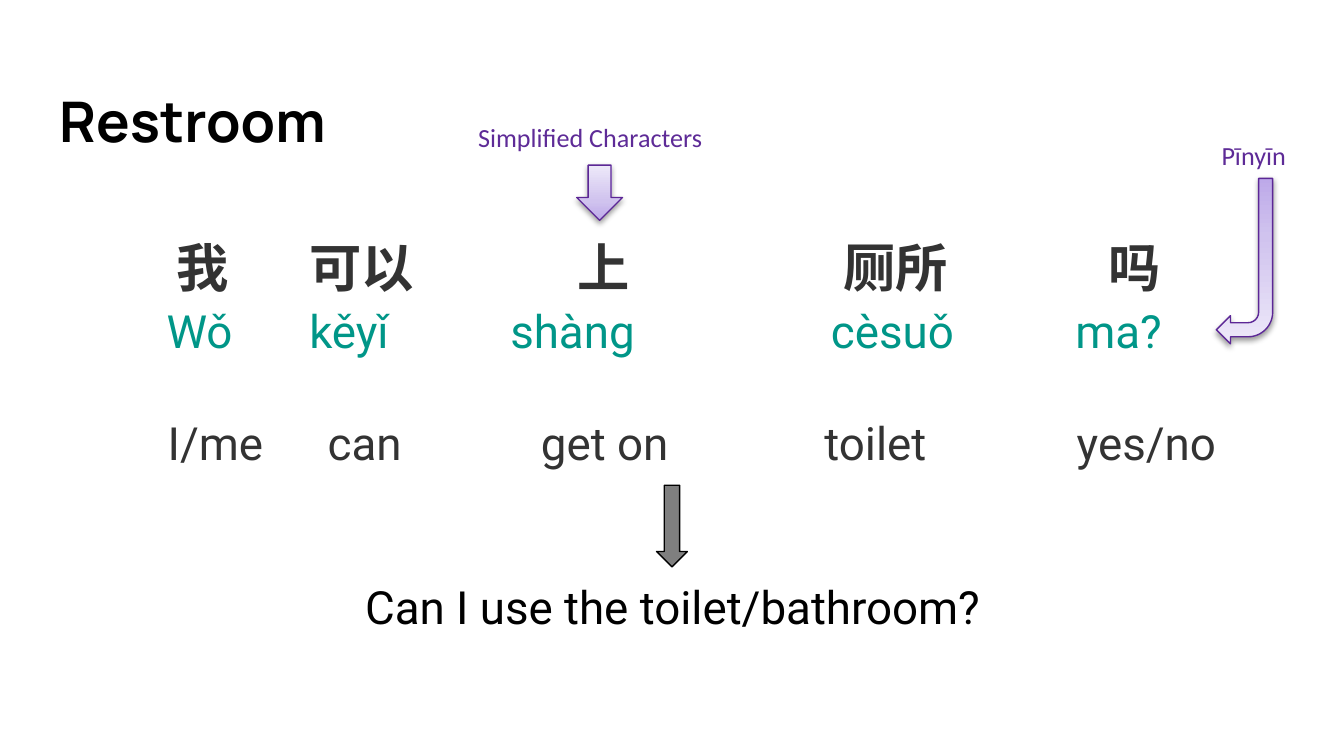
from lxml import etree
from pptx import Presentation
from pptx.dml.color import RGBColor
from pptx.enum.shapes import MSO_SHAPE as Shape
from pptx.enum.text import MSO_ANCHOR as Anchor, PP_ALIGN as Align
from pptx.oxml import parse_xml
from pptx.oxml.ns import nsdecls, qn
from pptx.util import Pt

COLORS = {
    "black": "000000", "text": "333333", "pinyin": "009688", "label": "5E2B97",
    "outline": "5C2796", "gray": "7F7F7F",
    "deep": "BDA9E9", "mid": "D0C3EE", "pale": "EDE8F9",
}


def style(paragraph, font, size, color, bold=False):
    for run in paragraph.runs:
        run.font.name, run.font.size, run.font.bold = font, Pt(size), bold
        run.font.color.rgb = RGBColor.from_string(COLORS[color])


def add_arrow(kind, left, top, width, height, outline):
    arrow = slide.shapes.add_shape(kind, Pt(left), Pt(top), Pt(width), Pt(height))
    arrow.shadow.inherit = False
    arrow.line.width = Pt(0.75)
    arrow.line.color.rgb = RGBColor.from_string(COLORS[outline])
    return arrow


prs = Presentation()
prs.slide_width, prs.slide_height = Pt(720), Pt(405)
slide = prs.slides.add_slide(prs.slide_layouts[1])
title, sentence = slide.placeholders

# Title and body frames
for holder, box, anchor, inset in [
    (title, (24.5, 40, 671, 49), Anchor.MIDDLE, 7.2),
    (sentence, (39.6, 118, 641.5, 264.3), Anchor.TOP, 12),
]:
    holder.left, holder.top, holder.width, holder.height = map(Pt, box)
    frame = holder.text_frame
    frame.word_wrap = True
    frame.vertical_anchor = anchor
    frame.margin_left = frame.margin_right = Pt(7.2)
    frame.margin_top, frame.margin_bottom = Pt(inset), Pt(7.2)

title.text_frame.text = "Restroom"
heading = title.text_frame.paragraphs[0]
heading.alignment = Align.LEFT
style(heading, "Manrope", 30, "black", True)

# Rows: words, indent, widening of each space, size, colour, bold, space before
rows = [
    (["我", "可以", "上", "厕所", "吗"],
     47.5, [37, 81.5, 108, 80], 28, "text", True, 0),
    (["Wǒ", "kěyǐ", "shàng", "cèsuǒ", "ma?"],
     42.5, [35, 59, 99, 59], 24.5, "pinyin", False, 5.5),
    (["I/me", "can", "get on", "toilet", "yes/no"],
     43, [28.5, 68.5, 77.5, 74.5], 24.5, "text", False, 33.5),
    (["Can I use the toilet/bathroom?"], 0, [], 24.5, "black", False, 61.5),
]
sentence.text_frame.text = "\n" * (len(rows) - 1)
for line, row in zip(sentence.text_frame.paragraphs, rows):
    words, indent, gaps, size, color, bold, space_above = row
    line.alignment = Align.LEFT if gaps else Align.CENTER
    line.line_spacing = 0.9
    line.space_before, line.space_after = Pt(space_above), Pt(0)
    line.add_run().text = words[0]
    for gap, word in zip(gaps, words[1:]):
        space = line.add_run()
        space.text = " "
        space.font._element.set("spc", str(round(gap * 100)))
        line.add_run().text = word
    style(line, "Roboto", size, color, bold)
    props = line._p.get_or_add_pPr()
    props.set("marL", str(Pt(indent)))
    props.set("indent", "0")
    etree.SubElement(props, qn("a:buNone"))

# Arrow to the translation
translation_arrow = add_arrow(Shape.DOWN_ARROW, 351.75, 260, 16.5, 43.7, "black")
translation_arrow.fill.solid()
translation_arrow.fill.fore_color.rgb = RGBColor.from_string(COLORS["gray"])

# Purple arrows from the labels
pinyin_arrow = add_arrow(Shape.BENT_ARROW, 651.6, 95.6, 30.2, 88.6, "outline")
pinyin_arrow.rotation = 180
characters_arrow = add_arrow(Shape.DOWN_ARROW, 309, 88.5, 24.5, 29.6, "outline")
gradient_stops = "".join(
    f'<a:gs pos="{place * 1000}"><a:srgbClr val="{COLORS[name]}"/></a:gs>'
    for place, name in [(0, "deep"), (35, "mid"), (100, "pale")])
for arrow in (pinyin_arrow, characters_arrow):
    props = arrow._element.spPr
    props.find(qn("a:prstGeom")).addnext(parse_xml(
        f'<a:gradFill rotWithShape="1" {nsdecls("a")}><a:gsLst>{gradient_stops}</a:gsLst>'
        '<a:lin ang="16200000" scaled="0"/></a:gradFill>'))
    props.find(qn("a:effectLst")).append(parse_xml(
        f'<a:outerShdw {nsdecls("a")} blurRad="{Pt(3.1)}" dist="{Pt(1.6)}" dir="5400000" '
        f'rotWithShape="0"><a:srgbClr val="{COLORS["black"]}">'
        '<a:alpha val="38000"/></a:srgbClr></a:outerShdw>'))

# Labels
for words, left, top, width, wrap in [
    ("Pīnyīn", 647.3, 71, 54, True),
    ("Simplified Characters", 249, 61.5, 162, False),
]:
    label = slide.shapes.add_textbox(Pt(left), Pt(top), Pt(width), Pt(24.2))
    label.text_frame.word_wrap = wrap
    label.text_frame.text = words
    style(label.text_frame.paragraphs[0], "Calibri", 14, "label")

prs.save("out.pptx")
